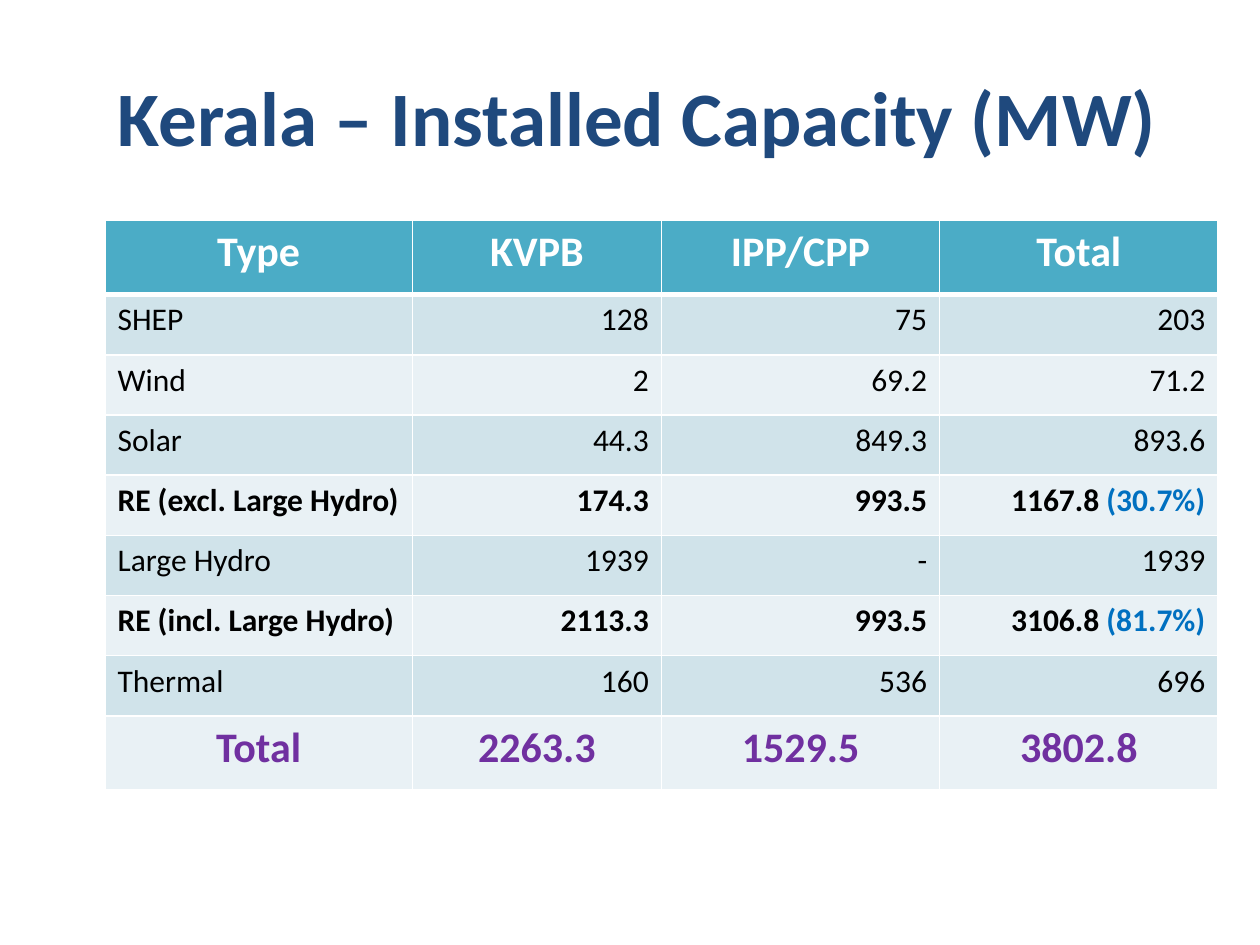
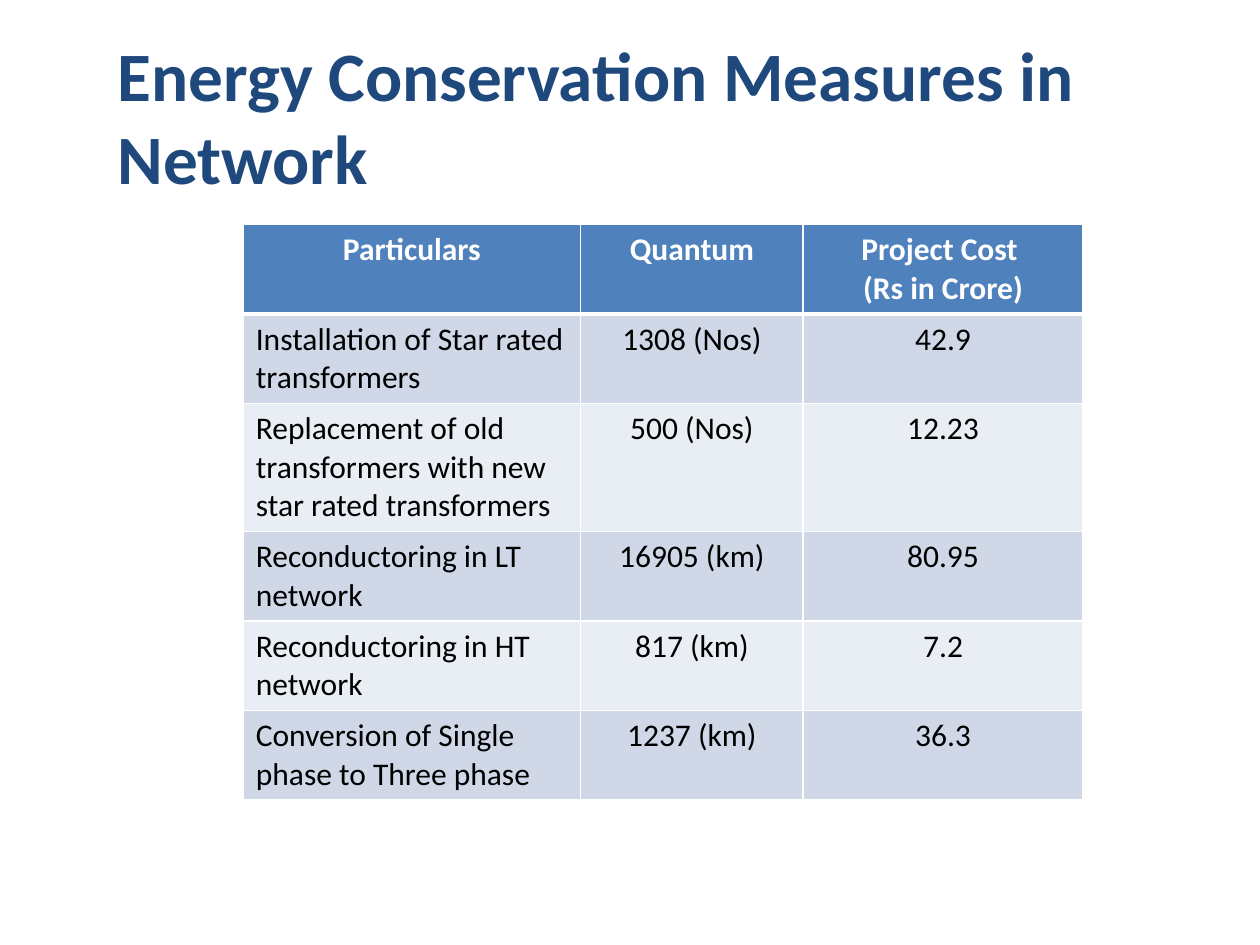
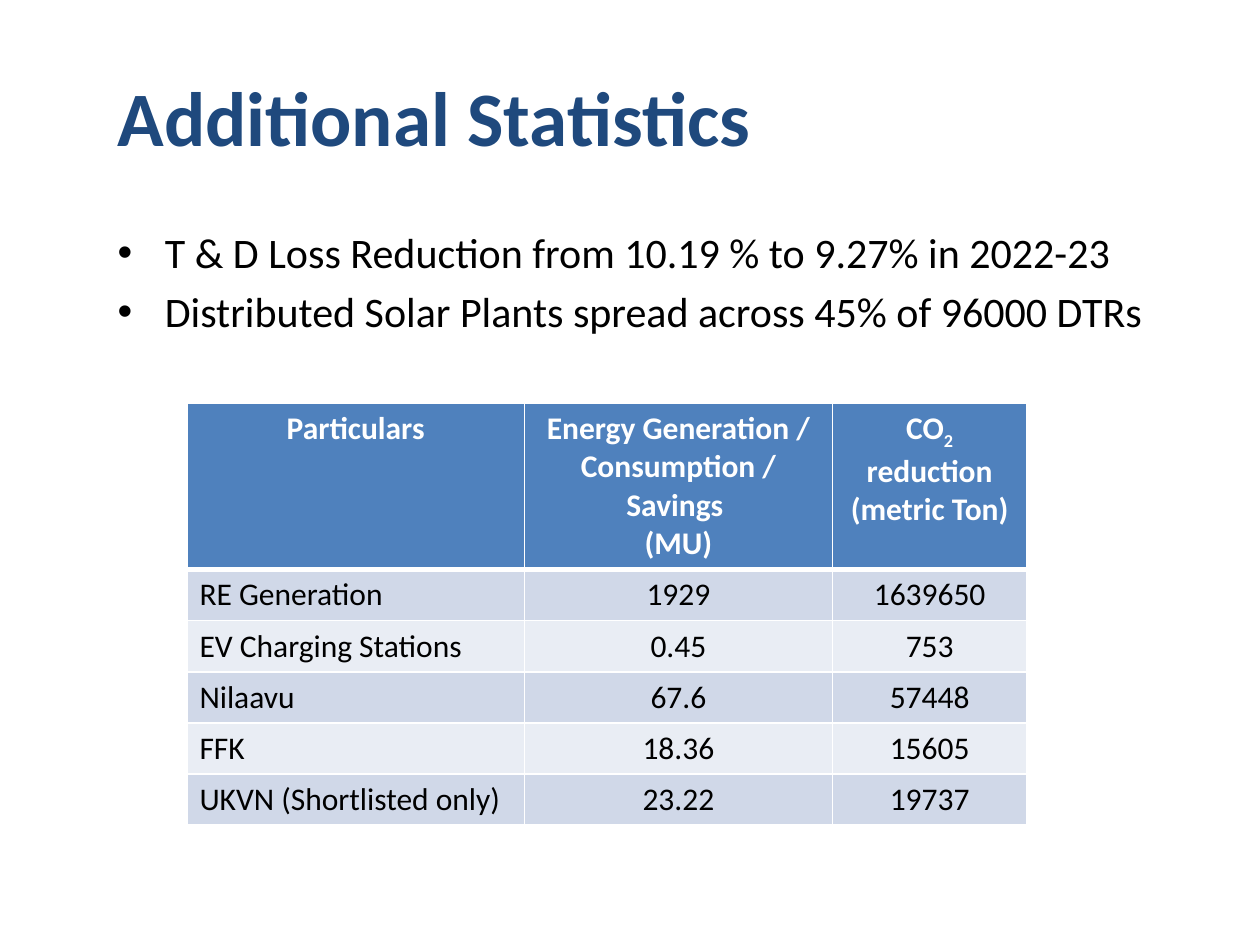
from dataclasses import dataclass

from lxml import etree
from pptx import Presentation
from pptx.dml.color import RGBColor
from pptx.enum import text
from pptx.oxml import ns
from pptx.util import Pt

LEFT, MID, RIGHT = text.PP_ALIGN.LEFT, text.PP_ALIGN.CENTER, text.PP_ALIGN.RIGHT


@dataclass(frozen=True)
class Theme:
    font: str = "Calibri"
    navy: str = "1F497D"
    black: str = "000000"
    white: str = "FFFFFF"
    note: str = "0070C0"
    sum: str = "7030A0"
    teal: tuple = ("4BACC6", "D0E3EA", "E9F1F5")
    blue: tuple = ("4F81BD", "D0D8E8", "E9EDF4")
    head: float = 44
    tight: float = 39.6
    large: float = 24
    small: float = 18


T = Theme()
TITLE = (60, 21, 636, 90)
BODY = (60, 126, 636, 338)


def put(obj, **vals):
    for key, val in vals.items():
        setattr(obj, key, val)


def style(font, size, color, bold=False):
    put(font, name=T.font, size=Pt(size), bold=bold)
    font.color.rgb = RGBColor.from_string(color)


def place(shape, box):
    put(shape, **dict(zip(("left", "top", "width", "height"), map(Pt, box))))


def edge(cell, side, width):
    line = etree.SubElement(cell._tc.get_or_add_tcPr(), ns.qn("a:ln" + side), w=str(Pt(width)))
    fill = etree.SubElement(line, ns.qn("a:solidFill"))
    etree.SubElement(fill, ns.qn("a:srgbClr"), val=T.white)


def fill_cell(cell, lines, back, align, look, below=1):
    for side, width in zip("LRTB", (1, 1, 1, below)):
        edge(cell, side, width)
    cell.fill.solid()
    cell.fill.fore_color.rgb = RGBColor.from_string(back)
    frame = cell.text_frame
    for i, line in enumerate(lines):
        para = frame.paragraphs[0] if i == 0 else frame.add_paragraph()
        para.alignment = align
        for part in [line] if isinstance(line, str) else line:
            words, mark = (part, None) if isinstance(part, str) else part
            run = para.add_run()
            run.text = words
            style(run.font, *look)
            if mark == "note":
                run.font.color.rgb = RGBColor.from_string(T.note)
            elif mark == "sub":
                run._r.get_or_add_rPr().set("baseline", "-25000")


def add_grid(slide, spot, cols, highs, rows, tones, align=MID,
             size=T.small, strong=(), total=False):
    box = (*spot, sum(cols), sum(highs))
    grid = slide.shapes.add_table(len(rows), len(cols), *map(Pt, box)).table
    for col, width in zip(grid.columns, cols):
        col.width = Pt(width)
    for row, high in zip(grid.rows, highs):
        row.height = Pt(high)
    last = len(rows) - 1
    for r, row in enumerate(rows):
        for c, item in enumerate(row):
            lines = [item] if isinstance(item, str) else item
            cell = grid.cell(r, c)
            if r == 0:
                fill_cell(cell, lines, tones[0], MID, (size, T.white, True), 3)
                continue
            back = tones[1 if r % 2 else 2]
            if total and r == last:
                fill_cell(cell, lines, back, MID, (size, T.sum, True))
            else:
                fill_cell(cell, lines, back, align if c else LEFT,
                          (T.small, T.black, r in strong))


def add_page(deck, layout, title, size=T.head):
    slide = deck.slides.add_slide(deck.slide_layouts[layout])
    head = slide.shapes.title
    place(head, TITLE)
    frame = head.text_frame
    frame.text = title
    put(frame, word_wrap=True, auto_size=text.MSO_AUTO_SIZE.NONE,
        vertical_anchor=text.MSO_ANCHOR.MIDDLE)
    para = frame.paragraphs[0]
    para.alignment = LEFT
    style(para.runs[0].font, size, T.navy, True)
    return slide


def add_list(slide, box, items):
    body = slide.placeholders[1]
    place(body, box)
    frame = body.text_frame
    frame.text = "\n".join(items)
    frame.auto_size = text.MSO_AUTO_SIZE.NONE
    for i, para in enumerate(frame.paragraphs):
        para.space_before = Pt(4.8 if i else 0)
        style(para.runs[0].font, T.large, T.black)


def add_power(deck):
    slide = add_page(deck, 5, "Kerala – Installed Capacity (MW)")
    rows = [
        ("Type", "KVPB", "IPP/CPP", "Total"),
        ("SHEP", "128", "75", "203"),
        ("Wind", "2", "69.2", "71.2"),
        ("Solar", "44.3", "849.3", "893.6"),
        ("RE (excl. Large Hydro)", "174.3", "993.5", [["1167.8 ", ("(30.7%)", "note")]]),
        ("Large Hydro", "1939", "-", "1939"),
        ("RE (incl. Large Hydro)", "2113.3", "993.5", [["3106.8 ", ("(81.7%)", "note")]]),
        ("Thermal", "160", "536", "696"),
        ("Total", "2263.3", "1529.5", "3802.8"),
    ]
    add_grid(slide, BODY[:2], (175.6, 142.4, 159, 159), (42.4, *[34.4] * 7, 42.4),
             rows, T.teal, RIGHT, T.large, (4, 6), True)


def add_works(deck):
    slide = add_page(deck, 5, "Energy Conservation Measures in Network", T.tight)
    rows = [
        ("Particulars", "Quantum", ["Project Cost ", "(Rs in Crore)"]),
        ("Installation of Star rated transformers", "1308 (Nos)", "42.9"),
        ("Replacement of old transformers with new star rated transformers",
         "500 (Nos)", "12.23"),
        ("Reconductoring in LT network", "16905 (km)", "80.95"),
        ("Reconductoring in HT network", "817 (km)", "7.2"),
        ("Conversion of Single phase to Three phase", "1237 (km)", "36.3"),
    ]
    add_grid(slide, (139, 128.2), (192.8, 127.2, 159.8), (51, 51, 73, 51, 51, 51),
             rows, T.blue)


def add_stats(deck):
    slide = add_page(deck, 1, "Additional Statistics")
    add_list(slide, BODY, [
        "T & D Loss Reduction from 10.19 % to 9.27% in 2022-23",
        "Distributed Solar Plants spread across 45% of 96000 DTRs",
    ])
    rows = [
        ("Particulars", ["Energy Generation / Consumption / Savings ", "(MU)"],
         [["CO", ("2", "sub"), " reduction"], "(metric Ton)"]),
        ("RE Generation", "1929", "1639650"),
        ("EV Charging Stations", "0.45", "753"),
        ("Nilaavu", "67.6", "57448"),
        ("FFK", "18.36", "15605"),
        ("UKVN (Shortlisted only)", "23.22", "19737"),
    ]
    add_grid(slide, (106.8, 230.4), (193, 175.8, 111.4), (94.8, *[29.2] * 5),
             rows, T.blue)


def main():
    deck = Presentation()
    put(deck, slide_width=Pt(720), slide_height=Pt(540))
    for build in (add_power, add_works, add_stats):
        build(deck)
    deck.save("out.pptx")


if __name__ == "__main__":
    main()
